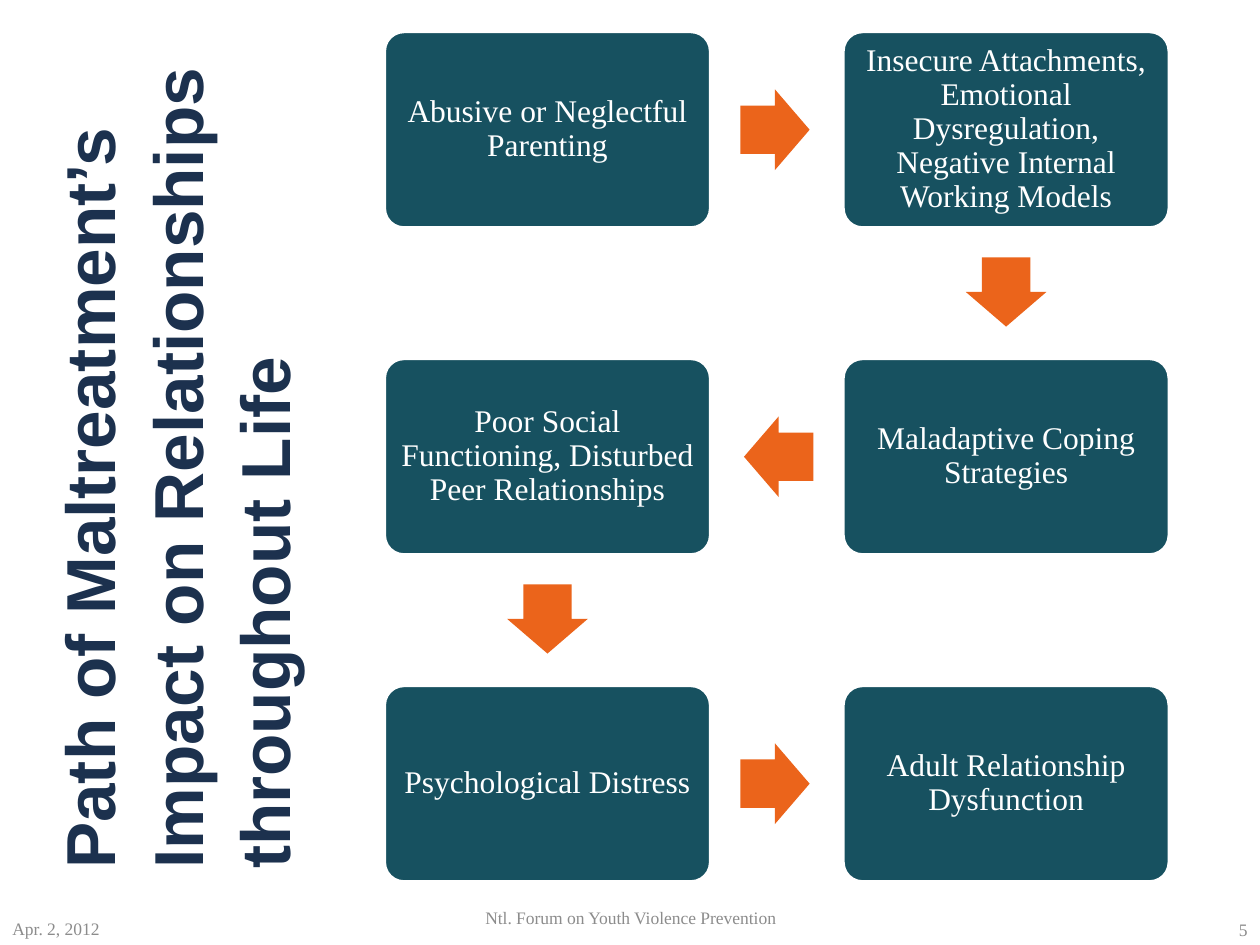
from pptx import Presentation
from pptx.dml.color import RGBColor
from pptx.enum import shapes, text
from pptx.util import Inches, Pt

HUES = {"navy": "1C314E", "teal": "175160", "orange": "EB641B",
        "white": "FFFFFF", "gray": "8C8C8C"}
SERIF = "Times New Roman"
SHAPE = shapes.MSO_SHAPE
ALIGN = text.PP_ALIGN

STEPS = [
    "Abusive or Neglectful Parenting",
    "Insecure Attachments, Emotional Dysregulation, "
    "Negative Internal Working Models",
    "Maladaptive Coping Strategies",
    "Poor Social Functioning, Disturbed Peer Relationships",
    "Psychological Distress",
    "Adult Relationship Dysfunction",
]
NOTES = [
    ("Apr. 2, 2012", (0, 7.17, 2.33, 0.4), ALIGN.LEFT),
    ("Ntl. Forum on Youth Violence Prevention", (3.42, 7.08, 3.17, 0.4), ALIGN.CENTER),
    ("5", (7.67, 7.18, 2.33, 0.4), ALIGN.RIGHT),
]


def hue(name):
    return RGBColor.from_string(HUES[name])


def write(frame, words, size, font, color, align, bold=False):
    frame.word_wrap = True
    frame.auto_size = text.MSO_AUTO_SIZE.NONE
    frame.vertical_anchor = text.MSO_ANCHOR.MIDDLE
    para = frame.paragraphs[0]
    para.alignment = align
    run = para.add_run()
    run.text = words
    run.font.size = Pt(size)
    run.font.name = font
    run.font.bold = bold
    run.font.color.rgb = hue(color)
    return para


def add_title(slide, box):
    title = slide.shapes.title
    title.left, title.top, title.width, title.height = map(Inches, box)
    title.rotation = 270
    para = write(title.text_frame, "Path of Maltreatment’s Impact on Relationships "
                 "throughout Life", 39.6, "Arial", "navy", ALIGN.LEFT, True)
    para.line_spacing = 1.05


def add_solid(slide, kind, box, color):
    shape = slide.shapes.add_shape(kind, *map(Inches, box))
    shape.shadow.inherit = False
    shape.fill.solid()
    shape.fill.fore_color.rgb = hue(color)
    return shape


def add_step(slide, box, words):
    card = add_solid(slide, SHAPE.ROUNDED_RECTANGLE, box, "teal")
    card.adjustments[0] = 0.1
    card.line.color.rgb = hue("white")
    card.line.width = Pt(2)
    frame = card.text_frame
    frame.margin_left = frame.margin_right = Inches(0.07)
    frame.margin_top = frame.margin_bottom = Inches(0.07)
    para = write(frame, words, 18, SERIF, "white", ALIGN.CENTER)
    para.line_spacing = 0.9


def add_arrow(slide, start, end):
    """Put an arrow between two step centres, a touch nearer the start."""
    (x1, y1), (x2, y2) = start, end
    wide, high, share = 0.55, 0.64, 0.496
    x, y = x1 + (x2 - x1) * share, y1 + (y2 - y1) * share
    arrow = add_solid(slide, SHAPE.RIGHT_ARROW,
                      (x - wide / 2, y - high / 2, wide, high), "orange")
    arrow.adjustments[0], arrow.adjustments[1] = 0.6, 0.5
    arrow.line.fill.background()
    if y2 > y1:
        arrow.rotation = 90
    elif x2 < x1:
        arrow.rotation = 180


def add_flow(slide, box):
    """Lay the steps out in a two-column path that turns at each row's end."""
    left, top, width, height = box
    wide, high = 2.59, 1.56
    rows = len(STEPS) // 2
    across, down = width - wide, (height - high) / (rows - 1)
    last = None
    for i, words in enumerate(STEPS):
        row, col = divmod(i, 2)
        if row % 2:
            col = 1 - col
        x, y = left + col * across, top + row * down
        mid = (x + wide / 2, y + high / 2)
        if last:
            add_arrow(slide, last, mid)
        add_step(slide, (x, y, wide, high), words)
        last = mid


def add_footer(slide):
    for words, box, align in NOTES:
        note = slide.shapes.add_textbox(*map(Inches, box))
        write(note.text_frame, words, 10, SERIF, "gray", align)


def main():
    deck = Presentation()
    deck.slide_width, deck.slide_height = Inches(10), Inches(7.5)
    slide = deck.slides.add_slide(deck.slide_layouts[5])
    add_title(slide, (-1.96, 2.62, 6.67, 2.08))
    add_flow(slide, (3.05, 0.25, 6.23, 6.75))
    add_footer(slide)
    deck.save("out.pptx")


if __name__ == "__main__":
    main()
